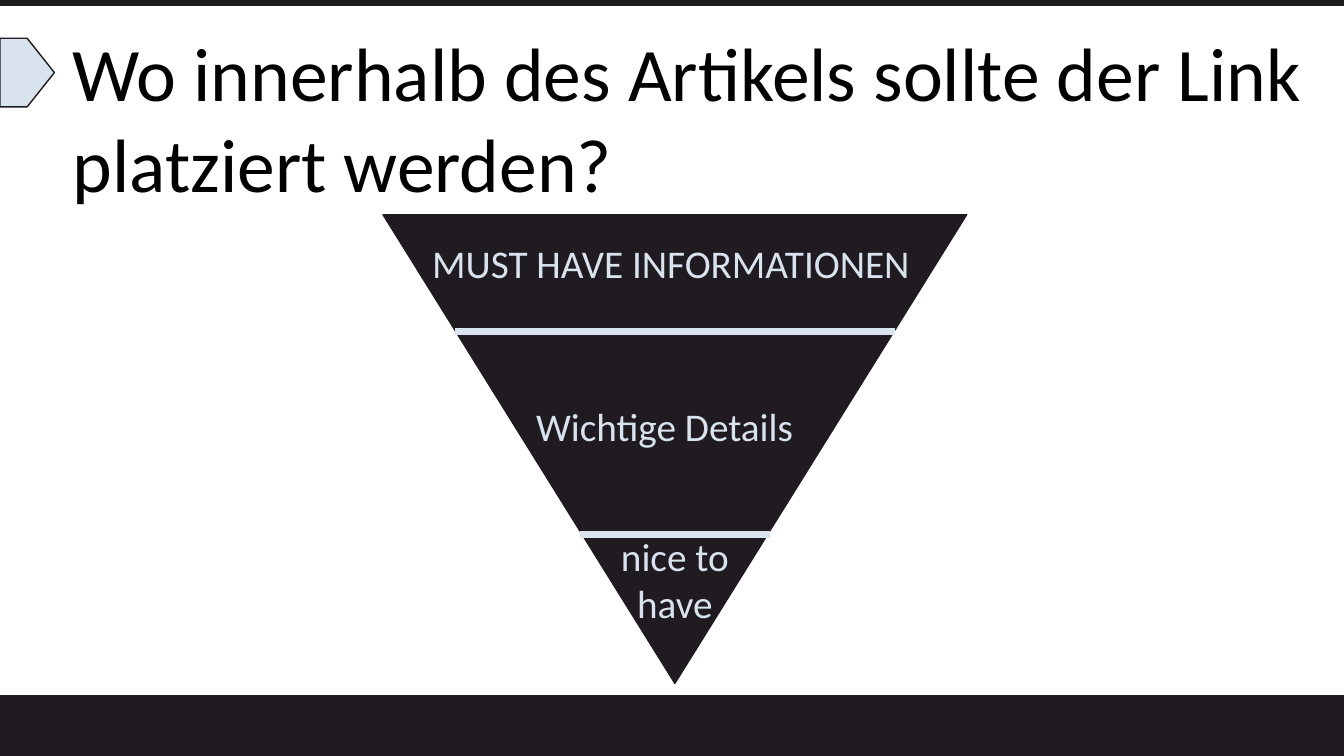
"""Build a slide showing the inverted pyramid for link placement in an article."""
from dataclasses import dataclass

import lxml.etree
import pptx
import pptx.dml.color
import pptx.enum.shapes
import pptx.enum.text
import pptx.oxml.ns
import pptx.util

COLORS = {"dark": "201B21", "light": "D9E3ED", "title": "000000"}
FONT = "Calibri"
COLS, ROWS = 160, 90
SHAPE = pptx.enum.shapes.MSO_SHAPE
ALIGN = pptx.enum.text.PP_ALIGN

prs = pptx.Presentation()
prs.slide_width = pptx.util.Inches(13.333)
prs.slide_height = pptx.util.Inches(7.5)


@dataclass(frozen=True)
class Box:
    col: float
    row: float
    cols: float
    rows: float

    def emu(self) -> tuple[int, int, int, int]:
        return x(self.col), y(self.row), x(self.cols), y(self.rows)


@dataclass(frozen=True)
class Block:
    kind: SHAPE
    box: Box
    fill: str = "dark"
    rotation: float = 0


@dataclass(frozen=True)
class Divider:
    start: float
    end: float
    row: float


@dataclass(frozen=True)
class Label:
    text: str
    box: Box
    align: ALIGN = ALIGN.LEFT


BLOCKS = [
    Block(SHAPE.RECTANGLE, Box(0, 82.8, COLS, 7.2)),
    Block(SHAPE.PENTAGON, Box(0, 4.56, 6.48, 8.16), fill="light"),
    Block(SHAPE.RECTANGLE, Box(0, 0, COLS, 0.6)),
    Block(SHAPE.ISOSCELES_TRIANGLE, Box(45.6, 25.56, 69.48, 55.8), rotation=180),
]
DIVIDERS = [Divider(54.12, 106.56, 39.48), Divider(69, 91.68, 63.6)]
LABELS = [
    Label("MUST HAVE INFORMATIONEN", Box(50.28, 27.96, 63.6, 6.84)),
    Label("Wichtige Details", Box(62.64, 47.28, 35.4, 6.84)),
    Label("nice to\nhave", Box(62.64, 62.76, 35.4, 12.48), ALIGN.CENTER),
]


def x(cols: float) -> int:
    return round(prs.slide_width * cols / COLS)


def y(rows: float) -> int:
    return round(prs.slide_height * rows / ROWS)


def rgb(name: str) -> pptx.dml.color.RGBColor:
    return pptx.dml.color.RGBColor.from_string(COLORS[name])


def write(sp, text: str, *, size: float, color: str, align: ALIGN = ALIGN.LEFT) -> None:
    tf = sp.text_frame
    tf.word_wrap = True
    tf.auto_size = pptx.enum.text.MSO_AUTO_SIZE.SHAPE_TO_FIT_TEXT
    tf.vertical_anchor = pptx.enum.text.MSO_ANCHOR.TOP
    tf.text = text
    for p in tf.paragraphs:
        p.alignment = align
        for r in p.runs:
            r.font.name = FONT
            r.font.size = pptx.util.Pt(size)
            r.font.color.rgb = rgb(color)


def add_title(s, text: str, box: Box) -> None:
    sp = s.shapes.title
    sp.left, sp.top, sp.width, sp.height = box.emu()
    write(sp, text, size=54, color="title")


def add_block(s, block: Block) -> None:
    sp = s.shapes.add_shape(block.kind, *block.box.emu())
    sp.rotation = block.rotation
    sp.shadow.inherit = False
    sp.fill.solid()
    sp.fill.fore_color.rgb = rgb(block.fill)
    sp.line.color.rgb = rgb("dark")
    sp.line.width = pptx.util.Pt(1)


def add_divider(s, div: Divider) -> None:
    cx = s.shapes.add_connector(
        pptx.enum.shapes.MSO_CONNECTOR.STRAIGHT,
        x(div.start), y(div.row), x(div.end), y(div.row),
    )
    cx.line.color.rgb = rgb("light")
    cx.line.width = pptx.util.Pt(5)
    lxml.etree.SubElement(cx._element.spPr, pptx.oxml.ns.qn("a:effectLst"))


def add_label(s, label: Label) -> None:
    sp = s.shapes.add_textbox(*label.box.emu())
    write(sp, label.text, size=28, color="light", align=label.align)


def main() -> None:
    s = prs.slides.add_slide(prs.slide_layouts[5])
    add_title(
        s,
        "Wo innerhalb des Artikels sollte der Link platziert werden?",
        Box(7.44, 2.52, 151.56, 23.04),
    )
    for block in BLOCKS:
        add_block(s, block)
    for div in DIVIDERS:
        add_divider(s, div)
    for label in LABELS:
        add_label(s, label)
    prs.save("out.pptx")


if __name__ == "__main__":
    main()
